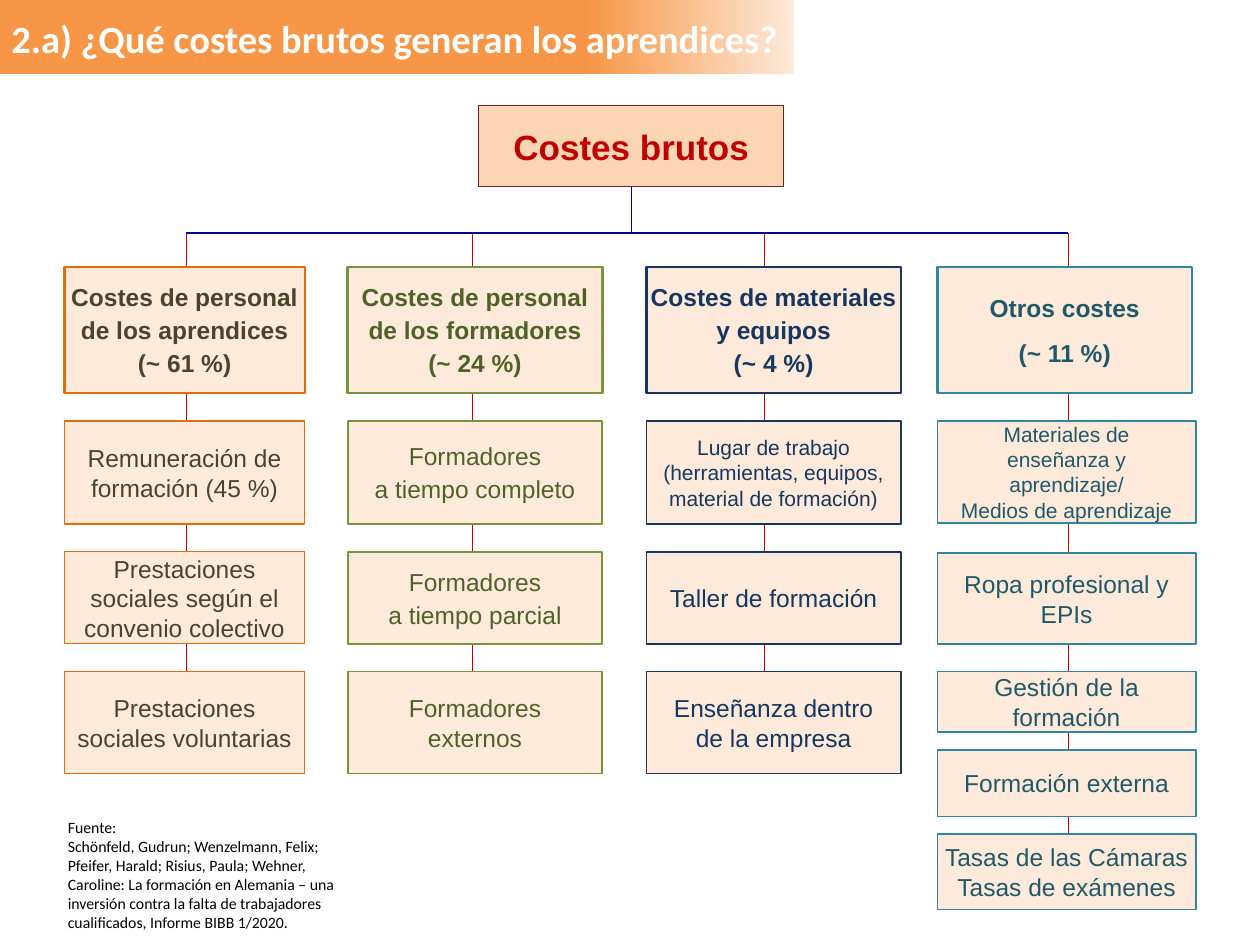
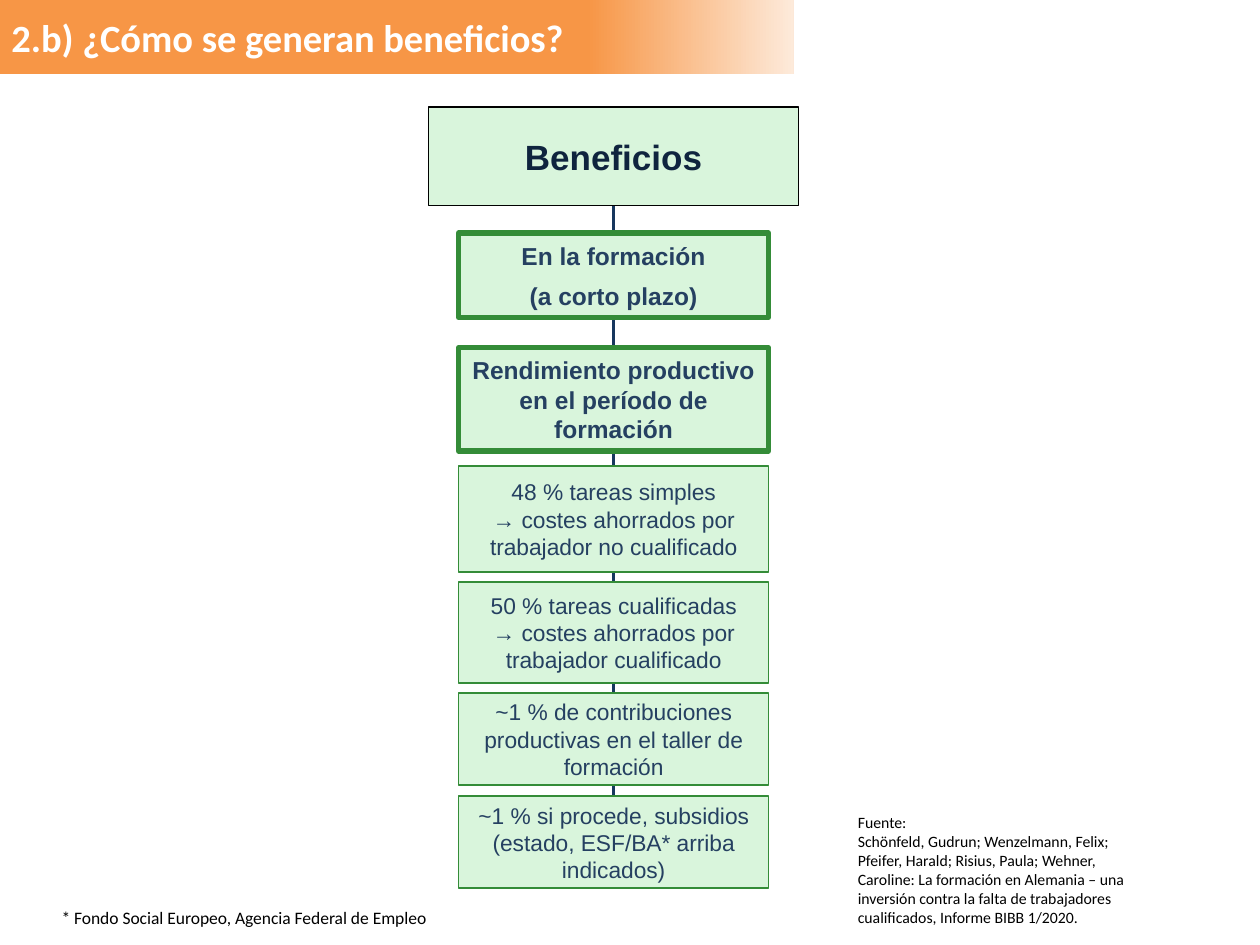
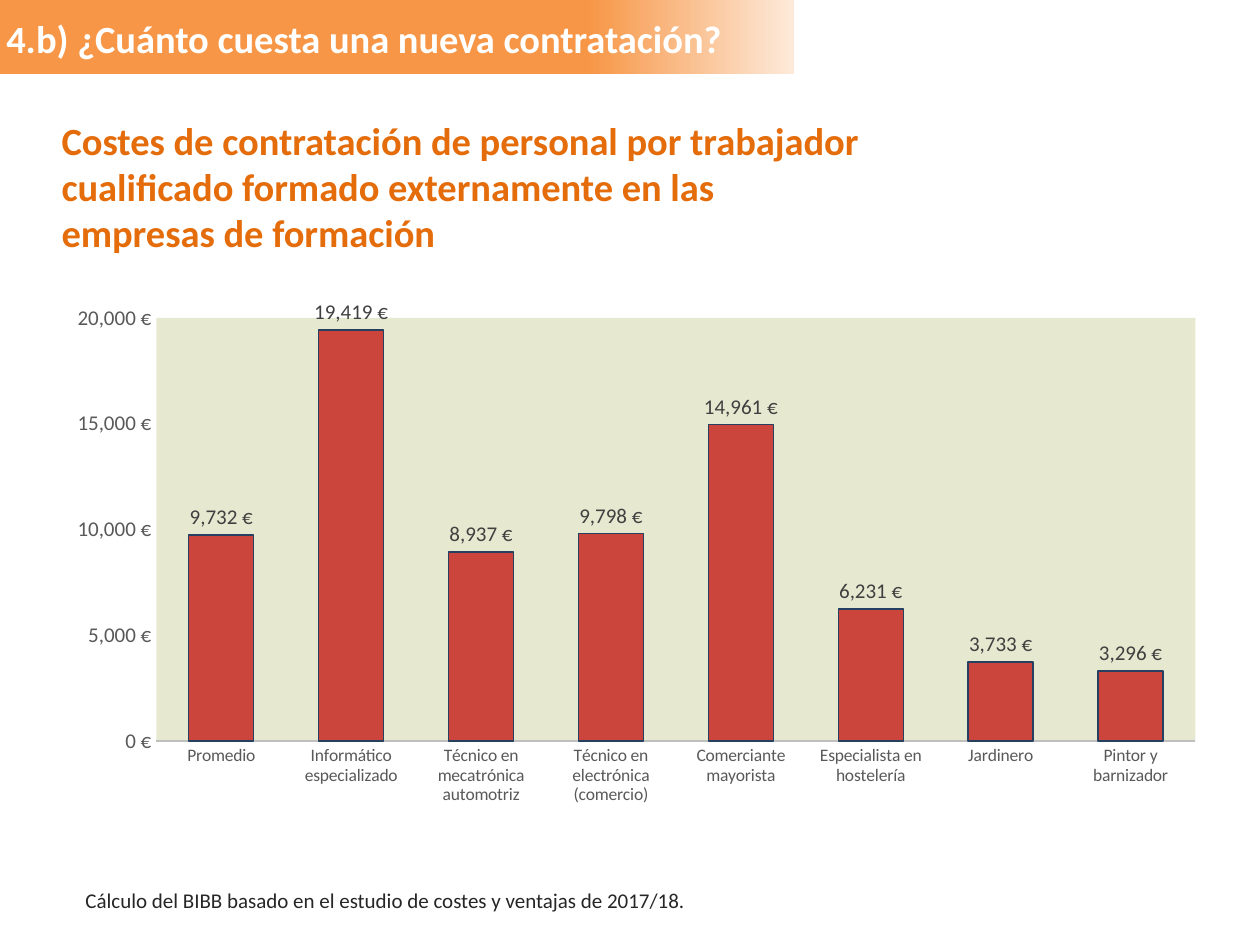
from lxml import etree
from pptx import Presentation
from pptx.chart.data import CategoryChartData
from pptx.dml.color import RGBColor
from pptx.enum.chart import XL_CHART_TYPE, XL_LABEL_POSITION, XL_TICK_MARK
from pptx.enum.shapes import MSO_CONNECTOR, MSO_SHAPE
from pptx.enum.text import MSO_ANCHOR, MSO_AUTO_SIZE, PP_ALIGN
from pptx.oxml import parse_xml
from pptx.oxml.ns import nsdecls, qn
from pptx.util import Inches, Pt

RECT = MSO_SHAPE.RECTANGLE
LINE = MSO_CONNECTOR.STRAIGHT
LEFT, CENTER = PP_ALIGN.LEFT, PP_ALIGN.CENTER
TOP, MIDDLE = MSO_ANCHOR.TOP, MSO_ANCHOR.MIDDLE
FIXED = MSO_AUTO_SIZE.NONE
COLUMN = XL_CHART_TYPE.COLUMN_CLUSTERED
ABOVE = XL_LABEL_POSITION.OUTSIDE_END
NO_TICK = XL_TICK_MARK.NONE

# Colours
WHITE = RGBColor(0xFF, 0xFF, 0xFF)
BLACK = RGBColor(0x00, 0x00, 0x00)
BAND = RGBColor(0xF7, 0x96, 0x46)
PEACH = RGBColor(0xFD, 0xEA, 0xDA)
APRICOT = RGBColor(0xFC, 0xD5, 0xB5)
ORANGE = RGBColor(0xE4, 0x6C, 0x0A)
BROWN = RGBColor(0x4A, 0x45, 0x2A)
WINE = RGBColor(0x63, 0x25, 0x23)
RED = RGBColor(0xC0, 0x00, 0x00)
BLUE = RGBColor(0x00, 0x00, 0x99)
NAVY = RGBColor(0x17, 0x37, 0x5E)
INK = RGBColor(0x0F, 0x24, 0x3E)
STEEL = RGBColor(0x25, 0x40, 0x61)
OLIVE = RGBColor(0x77, 0x93, 0x3C)
MOSS = RGBColor(0x4F, 0x62, 0x28)
TEAL = RGBColor(0x31, 0x85, 0x9C)
PINE = RGBColor(0x21, 0x59, 0x68)
MINT = RGBColor(0xD9, 0xF5, 0xDC)
GREEN = RGBColor(0x34, 0x8C, 0x38)
SAGE = RGBColor(0xE7, 0xE8, 0xD0)
GREY = RGBColor(0x59, 0x59, 0x59)
SILVER = RGBColor(0xBF, 0xBF, 0xBF)
DARK = RGBColor(0x26, 0x26, 0x26)
LABEL = RGBColor(0x40, 0x40, 0x40)

BODY, HEAD = "Arial", "Calibri"
EURO = '#,##0\\ "€"'
SOURCE = ("Fuente:\vSchönfeld, Gudrun; Wenzelmann, Felix; Pfeifer, Harald; "
          "Risius, Paula; Wehner, Caroline: La formación en Alemania – una "
          "inversión contra la falta de trabajadores cualificados, "
          "Informe BIBB 1/2020.")


class Deck:
    def __init__(self):
        self.prs = Presentation()
        self.prs.slide_width = Inches(10)
        self.prs.slide_height = Inches(7.5)
        self.layout = self.prs.slide_layouts[5]
        self.slide = None

    def start(self, title, left=-0.01, top=0.07):
        """Add a slide and set its title."""
        first = self.slide is None
        self.slide = self.prs.slides.add_slide(self.layout)
        if first:
            self.band()
        head = self.slide.shapes.title
        head.left, head.top = Inches(left), Inches(top)
        head.width, head.height = Inches(6.5), Inches(0.47)
        self.fill_in(head, [title], HEAD, 22, WHITE, bold=True,
                     align=LEFT, anchor=TOP)

    def band(self):
        """Put the gradient band on the shared layout."""
        bar = self.slide.shapes.add_shape(RECT, 0, 0, Inches(6.3), Inches(0.59))
        bar.shadow.inherit = False
        bar.line.fill.background()
        bar.fill.gradient()
        bar.fill.gradient_angle = 0
        stops = zip(bar.fill.gradient_stops, (0.74, 1), (BAND, PEACH))
        for stop, pos, color in stops:
            stop.position = pos
            stop.color.rgb = color
        self.layout.shapes._spTree.insert(2, bar._element)

    def fill_in(self, shape, paras, font, size, color, bold=False,
                align=CENTER, anchor=MIDDLE, gap=0, wrap=True):
        """Set the paragraphs of a shape and format them."""
        frame = shape.text_frame
        frame.word_wrap = wrap
        frame.auto_size = FIXED
        frame.vertical_anchor = anchor
        for i, text in enumerate(paras):
            para = frame.add_paragraph() if i else frame.paragraphs[0]
            para.text = text
            para.alignment = align
            if i and gap:
                para.space_before = Pt(gap)
            for run in para.runs:
                self.style(run.font, font, size, color, bold)

    def style(self, font, name, size, color, bold=False):
        font.name, font.size, font.bold = name, Pt(size), bold
        font.color.rgb = color

    def box(self, at, paras, fill, edge, width, color, size=14, **opts):
        shape = self.slide.shapes.add_shape(RECT, *map(Inches, at))
        shape.shadow.inherit = False
        shape.fill.solid()
        shape.fill.fore_color.rgb = fill
        shape.line.color.rgb = edge
        shape.line.width = Pt(width)
        self.fill_in(shape, paras, BODY, size, color, **opts)
        return shape

    def text(self, at, words, size, color=BLACK, bold=False, anchor=TOP):
        shape = self.slide.shapes.add_textbox(*map(Inches, at))
        self.fill_in(shape, [words], HEAD, size, color, bold, LEFT, anchor)

    def line(self, ends, color, width=0.75, start=None, end=None):
        """Draw a line behind the boxes, joined to start and end if given."""
        link = self.slide.shapes.add_connector(LINE, *map(Inches, ends))
        link.line.color.rgb = color
        link.line.width = Pt(width)
        etree.SubElement(link._element.spPr, qn("a:effectLst"))
        if start is not None:
            link.begin_connect(start, 2)
        if end is not None:
            link.end_connect(end, 0)
        self.slide.shapes._spTree.insert(2, link._element)

    def chart(self, at, cats, vals):
        data = CategoryChartData(number_format=EURO)
        data.categories = cats
        data.add_series("Series 1", vals)
        chart = self.slide.shapes.add_chart(
            COLUMN, *map(Inches, at), data).chart
        chart.has_legend = chart.has_title = False
        self.style(chart.font, HEAD, 10, BLACK)

        # Axes
        across, up = chart.category_axis, chart.value_axis
        for axis, size in ((across, 10), (up, 12)):
            axis.major_tick_mark = axis.minor_tick_mark = NO_TICK
            axis.has_major_gridlines = False
            self.style(axis.tick_labels.font, HEAD, size, GREY)
        across.format.line.color.rgb = SILVER
        across.format.line.width = Pt(1.25)
        up.format.line.fill.background()
        up.minimum_scale, up.maximum_scale, up.major_unit = 0, 20000, 5000
        up.tick_labels.number_format = EURO
        up.tick_labels.number_format_is_linked = False

        # Bars and labels
        plot = chart.plots[0]
        plot.gap_width = 100
        plot.vary_by_categories = False
        bars = plot.series[0].format
        bars.fill.solid()
        bars.fill.fore_color.rgb = RED
        tint = bars.fill._xPr.find(".//" + qn("a:srgbClr"))
        etree.SubElement(tint, qn("a:alpha")).set("val", "70000")
        bars.line.color.rgb = STEEL
        bars.line.width = Pt(0.75)
        plot.has_data_labels = True
        labels = plot.data_labels
        labels.show_value = True
        labels.position = ABOVE
        labels.number_format = EURO
        labels.number_format_is_linked = False
        self.style(labels.font, HEAD, 12, LABEL)

        # Plot area
        area = chart._chartSpace.chart.plotArea
        for old in area.findall(qn("c:layout")):
            area.remove(old)
        sizes = "".join(f'<c:{key} val="{val}"/>' for key, val in (
            ("layoutTarget", "inner"), ("xMode", "edge"), ("yMode", "edge"),
            ("x", 0.12), ("y", 0.1), ("w", 0.86), ("h", 0.63)))
        area.insert(0, parse_xml(
            f'<c:layout {nsdecls("c")}><c:manualLayout>{sizes}'
            '</c:manualLayout></c:layout>'))
        area.append(parse_xml(
            f'<c:spPr {nsdecls("c", "a")}><a:solidFill>'
            f'<a:srgbClr val="{SAGE}"/></a:solidFill></c:spPr>'))


# Rows as (top, height); columns as
# (left, head width, item width, trunk x, edge, ink, edge width, head, gap, items)
ROWS = [(3.34, 0.82), (4.38, 0.73), (5.33, 0.81)]
LONG = [(3.34, 0.81), (4.39, 0.72), (5.33, 0.48), (5.95, 0.53), (6.62, 0.6)]
COLUMNS = [
    (0.51, 1.91, 1.91, 1.48, ORANGE, BROWN, 0.75,
     ["Costes de personal", "de los aprendices", "(~ 61 %)"], 2,
     [["Remuneración de formación (45 %)"],
      ["Prestaciones sociales según el convenio colectivo"],
      ["Prestaciones sociales voluntarias"]]),
    (2.76, 2.02, 2.02, 3.75, OLIVE, MOSS, 1,
     ["Costes de personal", "de los formadores", "(~ 24 %)"], 2,
     [["Formadores", "a tiempo completo"],
      ["Formadores", "a tiempo parcial"],
      ["Formadores externos"]]),
    (5.13, 2.02, 2.02, 6.07, NAVY, NAVY, 1,
     ["Costes de materiales", "y equipos", "(~ 4 %)"], 2,
     [["Lugar de trabajo (herramientas, equipos, material de formación)"],
      ["Taller de formación"],
      ["Enseñanza dentro de la empresa"]]),
    (7.44, 2.02, 2.05, 8.48, TEAL, PINE, 1,
     ["Otros costes", "(~ 11 %)"], 8.8,
     [["Materiales de enseñanza y aprendizaje/", "Medios de aprendizaje"],
      ["Ropa profesional y EPIs"],
      ["Gestión de la formación"],
      ["Formación externa"],
      ["Tasas de las Cámaras", "Tasas de exámenes"]]),
]
SMALL = ("Lugar", "Materiales")

GAINS = [  # top, height, edge width, size, text
    (1.85, 0.67, 3, 14, ["En la formación", "(a corto plazo)"]),
    (2.76, 0.82, 3, 14, ["Rendimiento productivo en el período de formación"]),
    (3.7, 0.84, 1, 13, ["48 % tareas simples\v→ costes ahorrados por "
                        "trabajador no cualificado"]),
    (4.62, 0.8, 1, 13, ["50 % tareas cualificadas\v→ costes ahorrados por "
                        "trabajador cualificado"]),
    (5.5, 0.73, 1, 13, ["~1 % de contribuciones productivas en el taller "
                        "de formación"]),
    (6.32, 0.73, 1, 13, ["~1 % si procede, subsidios (estado, ESF/BA* "
                         "arriba indicados)"]),
]

HIRES = {
    "Promedio": 9732,
    "Informático especializado": 19419,
    "Técnico en mecatrónica automotriz": 8937,
    "Técnico en electrónica (comercio)": 9798,
    "Comerciante mayorista": 14961,
    "Especialista en hostelería": 6231,
    "Jardinero": 3733,
    "Pintor y barnizador": 3296,
}


def costs(deck):
    deck.start("2.a) ¿Qué costes brutos generan los aprendices?")
    root = deck.box((3.8, 0.84, 2.42, 0.64), ["Costes brutos"], APRICOT, WINE,
                    0.75, RED, 20, bold=True, wrap=False)
    bus = 1.85
    deck.line((5.01, 1.48, 5.01, bus), BLUE, start=root)
    deck.line((1.48, bus, 8.48, bus), BLUE)
    for left, wide, width, x, edge, ink, rule, head, gap, items in COLUMNS:
        deck.box((left, 2.12, wide, 1), head, PEACH, edge, 1.5, ink,
                 bold=True, gap=gap, wrap=False)
        rows = LONG if len(items) > len(ROWS) else ROWS
        for (top, height), paras in zip(rows, items):
            small = paras[0].startswith(SMALL)
            deck.box((left, top, width, height), paras, PEACH, edge, rule, ink,
                     12 if small else 14, gap=2 if rows is ROWS else 0,
                     wrap=not paras[0].startswith("Tasas"))
        deck.line((x, bus, x, rows[len(items) - 1][0] + 0.1), RED)
    deck.text((0.44, 6.44, 2.54, 1.01), SOURCE, 9)


def gains(deck):
    deck.start("2.b) ¿Cómo se generan beneficios?", top=0.06)
    root = deck.box((3.4, 0.85, 2.94, 0.78), ["Beneficios"], MINT, BLACK,
                    0.75, INK, 20, bold=True)
    boxes = [deck.box((3.64, top, 2.46, height), paras, MINT, GREEN, rule,
                      STEEL, size, bold=rule == 3, gap=6)
             for top, height, rule, size, paras in GAINS]
    deck.line((4.87, 1.63, 4.87, 6.32), NAVY, 1.5, root, boxes[-1])
    deck.text((0.39, 7.15, 3.86, 0.27),
              "* Fondo Social Europeo, Agencia Federal de Empleo", 10)
    deck.text((6.71, 6.4, 2.54, 1.01), SOURCE, 9)


def hires(deck):
    deck.start("4.b) ¿Cuánto cuesta una nueva contratación?", left=-0.05)
    deck.chart((0.09, 1.99, 9.59, 5.33), list(HIRES), list(HIRES.values()))
    deck.text((0.39, 0.88, 6.55, 1.21),
              "Costes de contratación de personal por trabajador cualificado "
              "formado externamente en las empresas de formación",
              22, ORANGE, bold=True)
    deck.text((0.58, 6.91, 5.2, 0.47),
              "Cálculo del BIBB basado en el estudio de costes y ventajas "
              "de 2017/18.", 12, DARK, anchor=MIDDLE)


def main():
    deck = Deck()
    costs(deck)
    gains(deck)
    hires(deck)
    deck.prs.save("out.pptx")


if __name__ == "__main__":
    main()
